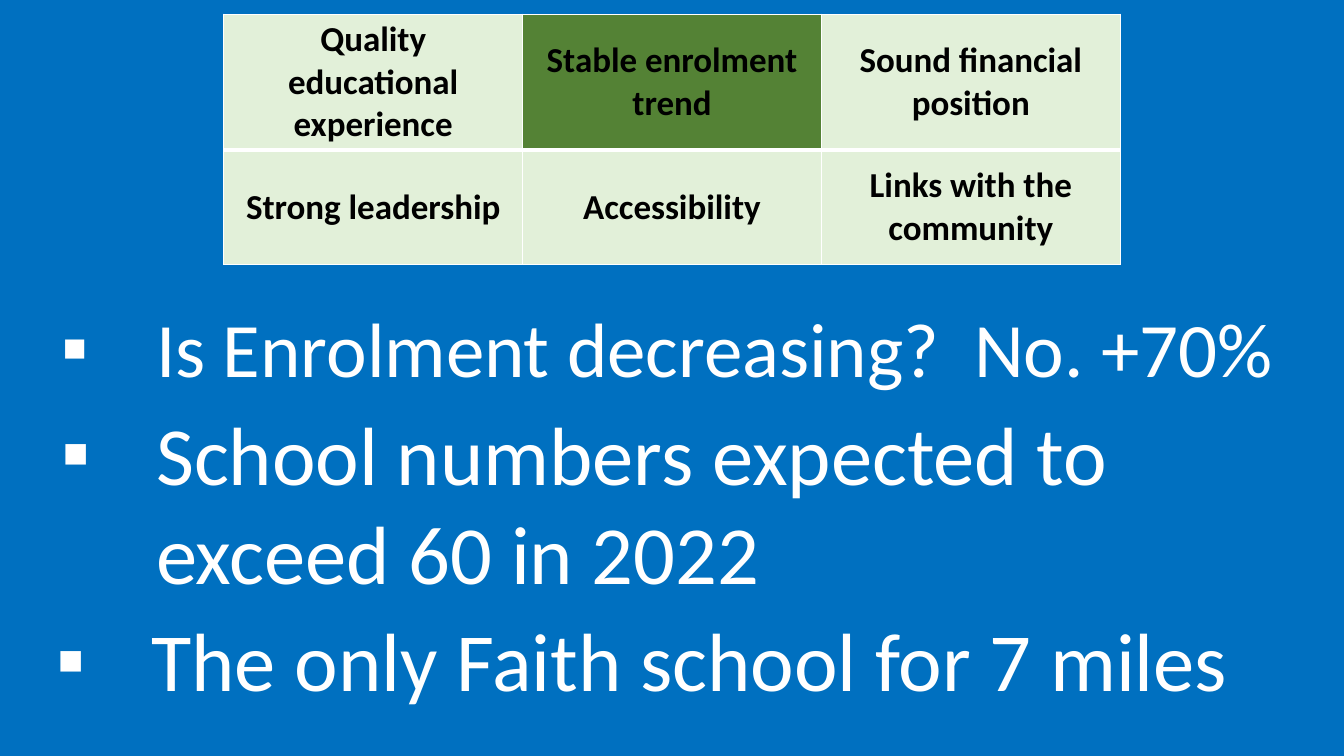
from dataclasses import dataclass

import pptx
import pptx.dml.color
import pptx.enum.text
import pptx.oxml.ns
import pptx.slide
import pptx.table
import pptx.text.text
import pptx.util
from lxml import etree

COLOURS = {
    "background": "0070C0",
    "criterion": "E2F0D9",
    "highlight": "548235",
    "table text": "000000",
    "white": "FFFFFF",
}
FONT = "Calibri"
COLUMN_WIDTH = pptx.util.Cm(7.53)
ROW_HEIGHTS = (pptx.util.Cm(3.38), pptx.util.Cm(2.87))
BULLET_HANG = pptx.util.Cm(2.39)


@dataclass(frozen=True)
class Criterion:
    text: str
    fill: str = "criterion"


@dataclass(frozen=True)
class Bullet:
    text: str
    size: float
    margin: float
    space_before: float


CRITERIA = (
    (
        Criterion("Quality educational experience"),
        Criterion("Stable enrolment trend", "highlight"),
        Criterion("Sound financial position"),
    ),
    (
        Criterion("Strong leadership"),
        Criterion("Accessibility"),
        Criterion("Links with the community"),
    ),
)
BULLETS = (
    Bullet("Is Enrolment decreasing?  No. +70%", 55, 2.51, 0),
    Bullet("School numbers expected to exceed 60 in 2022", 59, 2.51, 7),
    Bullet("The only Faith school for 7 miles", 59, 2.39, 6),
)


def rgb(name: str) -> pptx.dml.color.RGBColor:
    return pptx.dml.color.RGBColor.from_string(COLOURS[name])


def format_runs(paragraph: pptx.text.text._Paragraph, size: float, colour: str, bold: bool) -> None:
    for run in paragraph.runs:
        run.font.name = FONT
        run.font.size = pptx.util.Pt(size)
        run.font.bold = bold
        run.font.color.rgb = rgb(colour)


def set_borders(cell: pptx.table._Cell, widths: dict[str, float]) -> None:
    properties = cell._tc.get_or_add_tcPr()
    for position, (side, width) in enumerate(widths.items()):
        line = etree.Element(pptx.oxml.ns.qn(f"a:ln{side}"), w=str(pptx.util.Pt(width)))
        fill = etree.SubElement(line, pptx.oxml.ns.qn("a:solidFill"))
        etree.SubElement(fill, pptx.oxml.ns.qn("a:srgbClr"), val=COLOURS["white"])
        properties.insert(position, line)


def add_criteria_table(slide: pptx.slide.Slide) -> None:
    columns = len(CRITERIA[0])
    table = slide.shapes.add_table(
        len(CRITERIA), columns, pptx.util.Cm(5.64), pptx.util.Cm(0.36),
        COLUMN_WIDTH * columns, sum(ROW_HEIGHTS),
    ).table
    for row, height in zip(table.rows, ROW_HEIGHTS):
        row.height = height
    for row_index, criteria in enumerate(CRITERIA):
        # A thick rule separates the two rows
        top, bottom = (1, 3) if row_index == 0 else (3, 1)
        for column_index, criterion in enumerate(criteria):
            cell = table.cell(row_index, column_index)
            cell.fill.solid()
            cell.fill.fore_color.rgb = rgb(criterion.fill)
            cell.vertical_anchor = pptx.enum.text.MSO_ANCHOR.MIDDLE
            cell.margin_left = cell.margin_right = pptx.util.Cm(0.2)
            cell.margin_top = cell.margin_bottom = pptx.util.Cm(0.1)
            cell.text_frame.text = criterion.text
            paragraph = cell.text_frame.paragraphs[0]
            paragraph.alignment = pptx.enum.text.PP_ALIGN.CENTER
            format_runs(paragraph, 25, "table text", True)
            set_borders(cell, {"L": 1, "R": 1, "T": top, "B": bottom})


def fill_bullet_list(slide: pptx.slide.Slide) -> None:
    body = slide.placeholders[1]
    body.left, body.top = pptx.util.Cm(1.17), pptx.util.Cm(7.44)
    body.width, body.height = pptx.util.Cm(31.68), pptx.util.Cm(10.67)
    frame = body.text_frame
    frame.auto_size = pptx.enum.text.MSO_AUTO_SIZE.NONE
    frame.word_wrap = True
    frame.text = "\n".join(bullet.text for bullet in BULLETS)
    for paragraph, bullet in zip(frame.paragraphs, BULLETS):
        paragraph.line_spacing = 1.0
        paragraph.space_before = pptx.util.Pt(bullet.space_before)
        format_runs(paragraph, bullet.size, "white", False)
        properties = paragraph._p.get_or_add_pPr()
        properties.set("marL", str(pptx.util.Cm(bullet.margin)))
        properties.set("indent", str(-BULLET_HANG))
        etree.SubElement(properties, pptx.oxml.ns.qn("a:buChar"), char="▪")


def main() -> None:
    presentation = pptx.Presentation()
    presentation.slide_width = pptx.util.Cm(33.87)
    presentation.slide_height = pptx.util.Cm(19.05)
    slide = presentation.slides.add_slide(presentation.slide_layouts[1])
    slide.background.fill.solid()
    slide.background.fill.fore_color.rgb = rgb("background")

    # The table stands in place of a title
    title = slide.shapes.title.element
    title.getparent().remove(title)
    add_criteria_table(slide)
    fill_bullet_list(slide)
    presentation.save("out.pptx")


if __name__ == "__main__":
    main()
